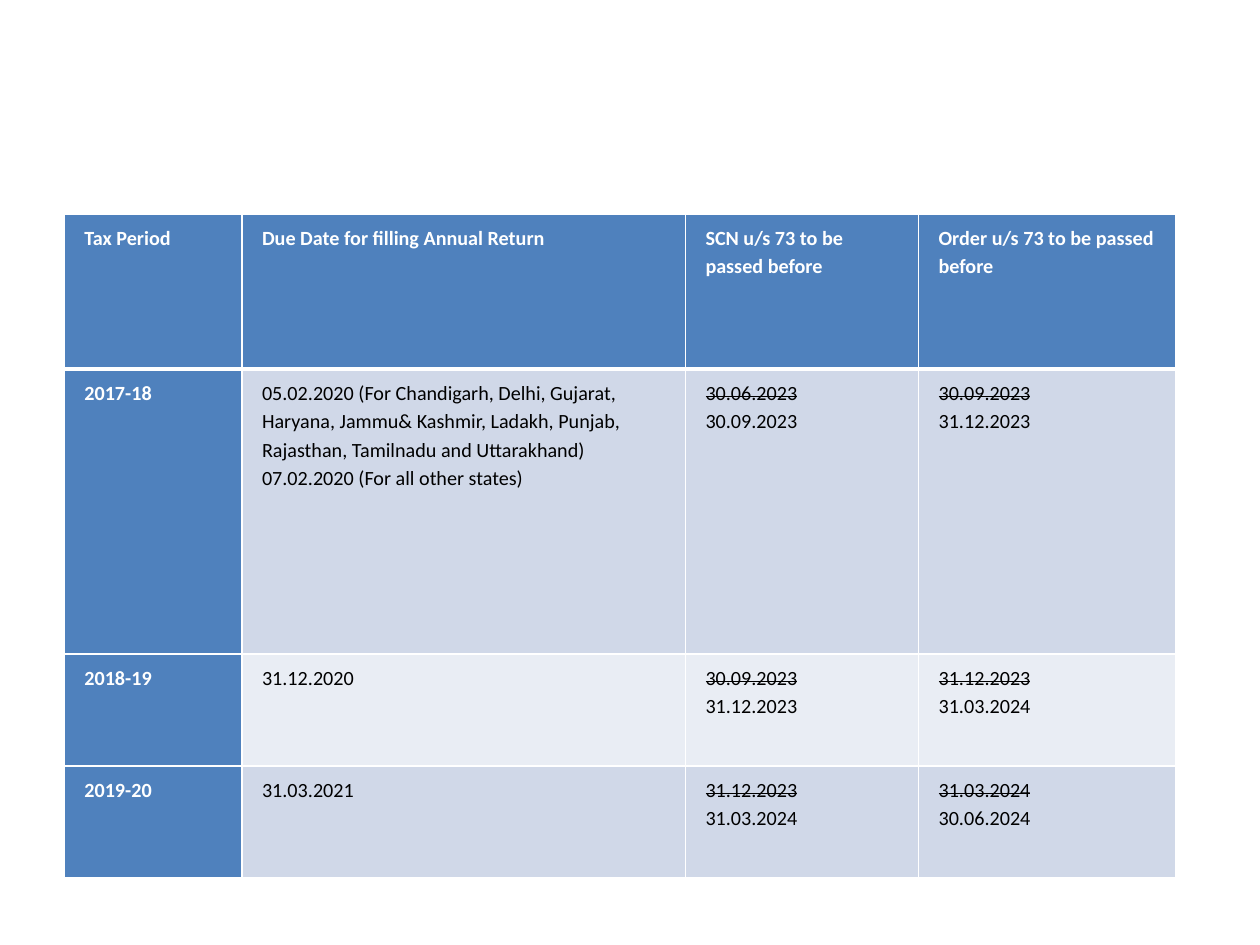
import pptx
import pptx.util
import pptx.dml.color
import pptx.oxml
import pptx.oxml.ns

Inches, Pt = pptx.util.Inches, pptx.util.Pt
RGB = pptx.dml.color.RGBColor.from_string

HEADERS = ["Tax Period", "Due Date for filling Annual Return",
           "SCN u/s 73 to be passed before", "Order u/s 73 to be passed before"]
PERIODS = [
    ("2017-18",
     ["05.02.2020 (For Chandigarh, Delhi, Gujarat, Haryana, Jammu& Kashmir, Ladakh, "
      "Punjab, Rajasthan, Tamilnadu and Uttarakhand)",
      "07.02.2020 (For all other states)"],
     ["30.06.2023", "30.09.2023"], ["30.09.2023", "31.12.2023"]),
    ("2018-19", ["31.12.2020"],
     ["30.09.2023", "31.12.2023"], ["31.12.2023", "31.03.2024"]),
    ("2019-20", ["31.03.2021"],
     ["31.12.2023", "31.03.2024"], ["31.03.2024", "30.06.2024"]),
]
COLORS = {"head": "4F81BD", "odd": "D0D8E8", "even": "E9EDF4",
          "light": "FFFFFF", "dark": "000000"}
COLS = [1.41, 3.52, 1.85, 2.04]
ROWS = [1.23, 2.26, 0.89, 0.89]
LEFT, TOP = 0.51, 1.7
MARGINS = {"margin_left": Inches(0.16), "margin_right": Inches(0.16),
           "margin_top": Inches(0.07), "margin_bottom": Inches(0.07)}
FONT = {"name": "Calibri", "size": Pt(11.5)}


def set_format(target, values):
    for name, value in values.items():
        setattr(target, name, value)


def add_borders(cell, row):
    widths = {"L": 1, "R": 1, "T": 3 if row == 1 else 1, "B": 3 if row == 0 else 1}
    tcPr = cell._tc.get_or_add_tcPr()
    for side, width in widths.items():
        tcPr.append(pptx.oxml.parse_xml(
            f'<a:ln{side} {pptx.oxml.ns.nsdecls("a")} w="{Pt(width)}">'
            f'<a:solidFill><a:srgbClr val="{COLORS["light"]}"/></a:solidFill>'
            f'</a:ln{side}>'))


def fill_cell(cell, lines, row, col):
    heading = row == 0 or col == 0
    add_borders(cell, row)
    cell.fill.solid()
    band = "head" if heading else "odd" if row % 2 else "even"
    cell.fill.fore_color.rgb = RGB(COLORS[band])
    set_format(cell, MARGINS)
    tf = cell.text_frame
    for i, text in enumerate(lines):
        p = tf.add_paragraph() if i else tf.paragraphs[0]
        p.line_spacing = 1.15
        r = p.add_run()
        r.text = text
        set_format(r.font, {**FONT, "bold": heading})
        r.font.color.rgb = RGB(COLORS["light" if heading else "dark"])
        if row > 0 and col > 1 and i == 0:
            r._r.get_or_add_rPr().set("strike", "sngStrike")


def main():
    prs = pptx.Presentation()
    set_format(prs, {"slide_width": Inches(10), "slide_height": Inches(7.5)})
    s = prs.slides.add_slide(prs.slide_layouts[6])
    table = s.shapes.add_table(len(ROWS), len(COLS), Inches(LEFT), Inches(TOP),
                               Inches(sum(COLS)), Inches(sum(ROWS))).table
    for column, width in zip(table.columns, COLS):
        column.width = Inches(width)
    for row, height in zip(table.rows, ROWS):
        row.height = Inches(height)
    grid = [[[h] for h in HEADERS]] + [[[period], *dates] for period, *dates in PERIODS]
    for i, cells in enumerate(grid):
        for j, lines in enumerate(cells):
            fill_cell(table.cell(i, j), lines, i, j)
    prs.save("out.pptx")


if __name__ == "__main__":
    main()
